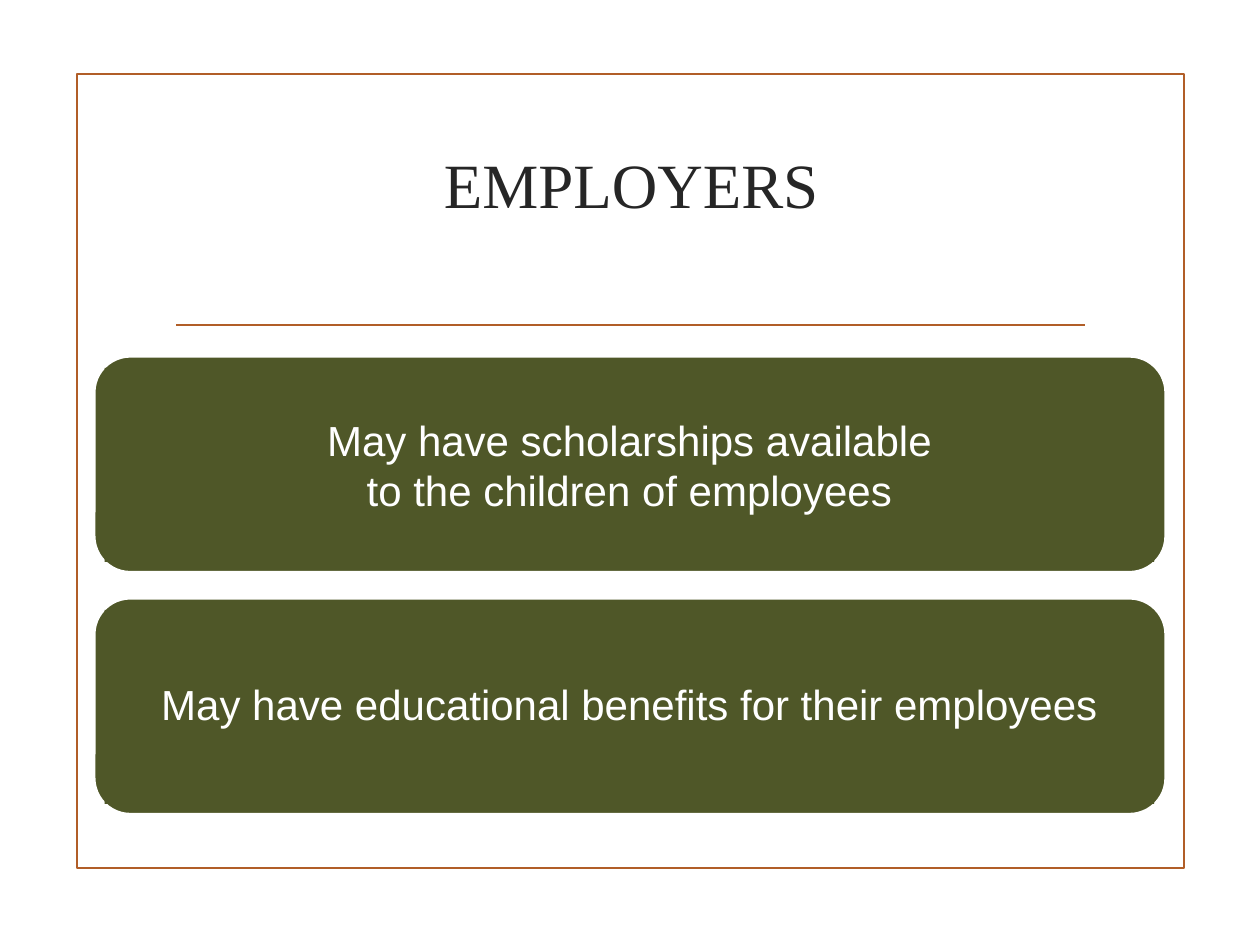
from lxml.etree import SubElement
from pptx import Presentation
from pptx.dml.color import RGBColor
from pptx.enum.shapes import MSO_CONNECTOR, MSO_SHAPE
from pptx.enum.text import MSO_ANCHOR, PP_ALIGN
from pptx.oxml.ns import qn
from pptx.util import Inches, Pt

RUST = RGBColor(0xB1, 0x5E, 0x28)
OLIVE = RGBColor(0x4F, 0x57, 0x28)
WHITE = RGBColor(0xFF, 0xFF, 0xFF)
CHARCOAL = RGBColor(0x26, 0x26, 0x26)

PANEL_TOP = 2.83
PANEL_PITCH = 1.92
BENEFITS = [
    ("May have scholarships available\vto the children of employees", 1.0),
    ("May have educational benefits for their employees", 0.9),
]


class SlideBuilder:
    title_font = "Times New Roman"
    body_font = "Arial"
    line_width = Pt(1.25)

    def __init__(self, slide):
        self.slide = slide

    def box(self, kind, left, top, width, height, fill=None, line=None):
        shape = self.slide.shapes.add_shape(
            kind, Inches(left), Inches(top), Inches(width), Inches(height)
        )
        shape.shadow.inherit = False
        if fill is None:
            shape.fill.background()
        else:
            shape.fill.solid()
            shape.fill.fore_color.rgb = fill
        if line is None:
            shape.line.fill.background()
        else:
            shape.line.color.rgb = line
            shape.line.width = self.line_width
        return shape

    def rule(self, left, right, top):
        connector = self.slide.shapes.add_connector(
            MSO_CONNECTOR.STRAIGHT,
            Inches(left), Inches(top), Inches(right), Inches(top),
        )
        connector.line.color.rgb = RUST
        connector.line.width = self.line_width
        SubElement(connector.element.spPr, qn("a:effectLst"))

    def set_text(self, shape, text, font_name, size, color):
        frame = shape.text_frame
        frame.word_wrap = True
        frame.vertical_anchor = MSO_ANCHOR.MIDDLE
        paragraph = frame.paragraphs[0]
        paragraph.text = text
        paragraph.alignment = PP_ALIGN.CENTER
        paragraph.font.name = font_name
        paragraph.font.size = Pt(size)
        paragraph.font.color.rgb = color
        return frame

    def title(self, text):
        shape = self.slide.shapes.add_textbox(
            Inches(1.29), Inches(1.08), Inches(7.44), Inches(0.75)
        )
        self.set_text(shape, text, self.title_font, 36, CHARCOAL)

    def panel(self, top, text, line_spacing):
        self.box(MSO_SHAPE.ROUNDED_RECTANGLE, 0.75, top, 8.5, 1.71, OLIVE, WHITE)
        label = self.box(MSO_SHAPE.RECTANGLE, 0.83, top + 0.09, 8.33, 1.54, OLIVE)
        frame = self.set_text(label, text, self.body_font, 24, WHITE)
        frame.margin_left = frame.margin_right = Inches(0.25)
        frame.margin_top = frame.margin_bottom = 0
        frame.paragraphs[0].line_spacing = line_spacing


def main():
    presentation = Presentation()
    presentation.slide_width = Inches(10)
    presentation.slide_height = Inches(7.5)
    builder = SlideBuilder(
        presentation.slides.add_slide(presentation.slide_layouts[6])
    )
    builder.box(MSO_SHAPE.RECTANGLE, 0.61, 0.59, 8.79, 6.3, line=RUST)
    builder.rule(1.4, 8.61, 2.58)
    for index, (text, line_spacing) in enumerate(BENEFITS):
        builder.panel(PANEL_TOP + index * PANEL_PITCH, text, line_spacing)
    builder.title("EMPLOYERS")
    presentation.save("out.pptx")


if __name__ == "__main__":
    main()
